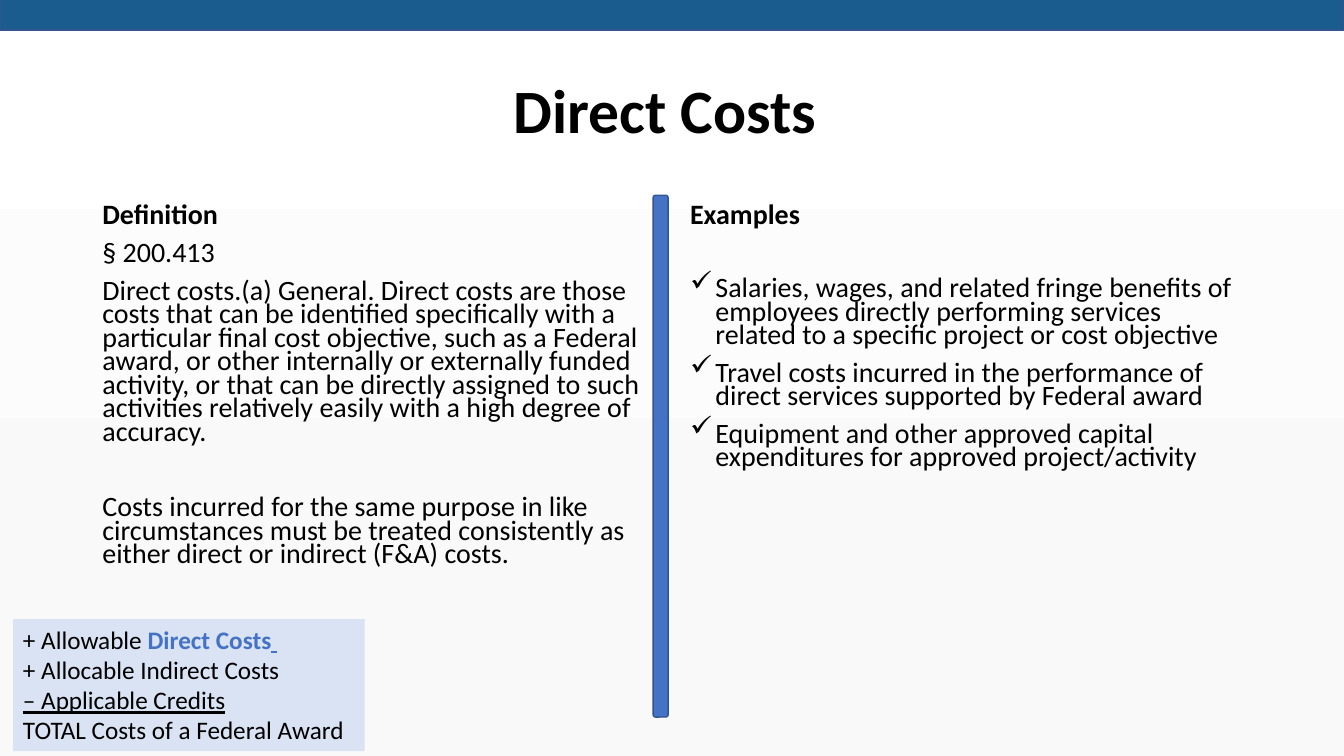
import pptx
import pptx.util
import pptx.dml.color
import pptx.enum.shapes
import pptx.enum.text
import lxml.etree

Cm = pptx.util.Cm
Pt = pptx.util.Pt
RGBColor = pptx.dml.color.RGBColor
Shape = pptx.enum.shapes.MSO_SHAPE
Align = pptx.enum.text.PP_ALIGN
Anchor = pptx.enum.text.MSO_ANCHOR

BLACK = RGBColor(0x00, 0x00, 0x00)
WHITE = RGBColor(0xFF, 0xFF, 0xFF)
PALE_GREY = RGBColor(0xF9, 0xF9, 0xF9)
BANNER_BLUE = RGBColor(0x1A, 0x5C, 0x8D)
ACCENT_BLUE = RGBColor(0x44, 0x72, 0xC4)
OUTLINE_BLUE = RGBColor(0x32, 0x54, 0x91)
PALE_BLUE = RGBColor(0xDA, 0xE3, 0xF3)

FONT = "Calibri"
CHECK = "✓"
HANGING = Cm(0.64)

DEFINITION = [
    ("§ 200.413", 10, None),
    ("Direct costs.(a) General. Direct costs are those costs that can be identified "
     "specifically with a particular final cost objective, such as a Federal award, "
     "or other internally or externally funded activity, or that can be directly "
     "assigned to such activities relatively easily with a high degree of accuracy.", 10, None),
    ("Costs incurred for the same purpose in like circumstances must be treated "
     "consistently as either direct or indirect (F&A) costs.", 37, None),
]
EXAMPLES = [
    ("Salaries, wages, and related fringe benefits of employees directly performing "
     "services related to a specific project or cost objective", 35, CHECK),
    ("Travel costs incurred in the performance of direct services supported by "
     "Federal award", 10, CHECK),
    ("Equipment and other approved capital expenditures for approved project/activity",
     10, CHECK),
]
FORMULA = [
    [("+ Allowable", BLACK, False, False), (" Direct Costs", ACCENT_BLUE, True, False),
     (" ", ACCENT_BLUE, True, True)],
    [("+ Allocable Indirect Costs", BLACK, False, False)],
    [("– Applicable Credits", BLACK, False, True)],
    [("TOTAL Costs of a Federal Award", BLACK, False, False)],
]


def add_span(para, text, size, color=BLACK, bold=False, underline=False):
    span = para.add_run()
    span.text = text
    font = span.font
    font.name, font.size, font.bold = FONT, Pt(size), bold
    font.underline = underline
    font.color.rgb = color


def add_frame(page, box):
    frame = page.shapes.add_textbox(*box).text_frame
    frame.word_wrap = True
    return frame


def next_para(frame, index):
    return frame.paragraphs[0] if index == 0 else frame.add_paragraph()


def add_bullet(para, symbol):
    properties = para._p.get_or_add_pPr()
    properties.set("marL", str(HANGING))
    properties.set("indent", str(-HANGING))
    bullet = lxml.etree.SubElement(properties, pptx.oxml.ns.qn("a:buChar"))
    bullet.set("char", symbol)


def paint_background(page):
    fill = page.background.fill
    fill.gradient()
    fill.gradient_angle = 270
    for stop, color, position in zip(fill.gradient_stops, (WHITE, PALE_GREY), (0, 0.83)):
        stop.color.rgb = color
        stop.position = position


def add_title(page, box, text):
    frame = add_frame(page, box)
    frame.vertical_anchor = Anchor.MIDDLE
    para = frame.paragraphs[0]
    para.alignment = Align.CENTER
    para.line_spacing = 0.9
    add_span(para, text, 44, bold=True)


def add_column(page, box, heading, entries):
    frame = add_frame(page, box)
    for index, (text, space, symbol) in enumerate([(heading, 10, None)] + entries):
        para = next_para(frame, index)
        para.line_spacing = 0.7
        para.space_before = Pt(space)
        if symbol:
            add_bullet(para, symbol)
        add_span(para, text, 20, bold=index == 0)


def add_bar(page, box, preset, color):
    bar = page.shapes.add_shape(preset, *box)
    bar.shadow.inherit = False
    bar.fill.solid()
    bar.fill.fore_color.rgb = color
    bar.line.color.rgb = OUTLINE_BLUE
    bar.line.width = Pt(1)


def add_formula(page, box, lines):
    panel = page.shapes.add_textbox(*box)
    panel.fill.solid()
    panel.fill.fore_color.rgb = PALE_BLUE
    frame = panel.text_frame
    frame.word_wrap = True
    frame.auto_size = pptx.enum.text.MSO_AUTO_SIZE.SHAPE_TO_FIT_TEXT
    for index, spans in enumerate(lines):
        para = next_para(frame, index)
        for text, color, bold, underline in spans:
            add_span(para, text, 18, color, bold, underline)


def main():
    deck = pptx.Presentation()
    deck.slide_width, deck.slide_height = Cm(33.87), Cm(19.05)
    page = deck.slides.add_slide(deck.slide_layouts[6])
    paint_background(page)

    left, top, column_width = Cm(2.33), Cm(5.07), Cm(14.4)
    right = left + Cm(14.81)
    add_title(page, (left, Cm(1.01), Cm(29.21), Cm(3.68)), "Direct Costs ")
    add_column(page, (left, top, column_width, Cm(9.88)), "Definition", DEFINITION)
    add_column(page, (right, top, column_width, Cm(12.09)), "Examples", EXAMPLES)
    add_bar(page, (Cm(16.46), Cm(4.92), Cm(0.38), Cm(13.15)),
            Shape.ROUNDED_RECTANGLE, ACCENT_BLUE)
    add_bar(page, (0, Cm(-0.08), deck.slide_width, Cm(0.84)), Shape.RECTANGLE, BANNER_BLUE)
    add_formula(page, (Cm(0.33), Cm(15.6), Cm(8.86), Cm(3.33)), FORMULA)
    deck.save("out.pptx")


if __name__ == "__main__":
    main()
